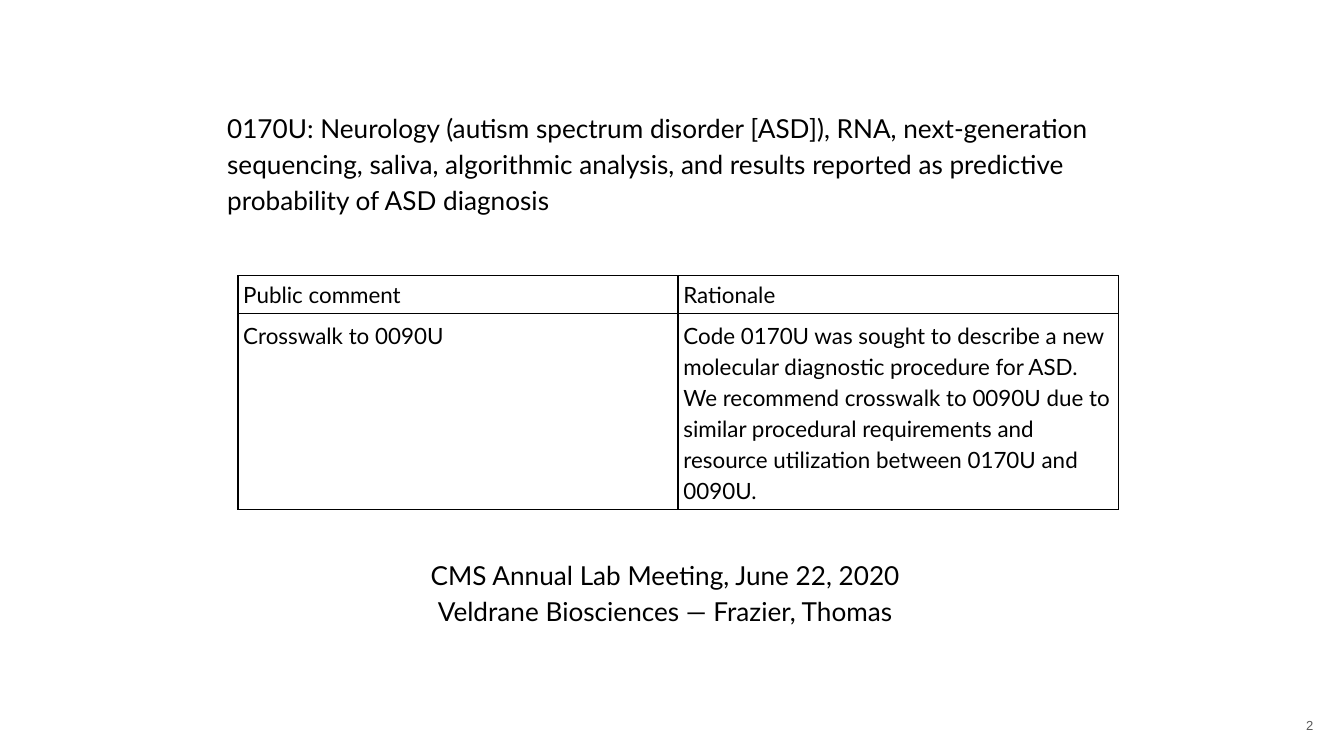
from lxml import etree
from pptx import Presentation
from pptx.dml.color import RGBColor
from pptx.enum.text import MSO_ANCHOR, MSO_AUTO_SIZE, PP_ALIGN
from pptx.oxml.ns import qn
from pptx.util import Inches, Pt

THEME = {
    "heading": {"name": "Lato", "size": Pt(14), "color": "000000"},
    "cell": {"name": "Lato", "size": Pt(12), "color": "000000"},
    "number": {"name": "Arial", "size": Pt(7), "color": "595959"},
    "border": {"width": Pt(0.75), "color": "000000"},
}


def write(tf, lines, style, inset, align=PP_ALIGN.LEFT, spacing=1.15):
    """Fill a text frame, one paragraph per line, in a theme style."""
    for i, line in enumerate(lines):
        p = tf.paragraphs[0] if i == 0 else tf.add_paragraph()
        p.alignment, p.line_spacing = align, spacing
        p.space_before = Pt(0)
        r = p.add_run()
        r.text = line
        r.font.name, r.font.size = THEME[style]["name"], THEME[style]["size"]
        r.font.color.rgb = RGBColor.from_string(THEME[style]["color"])
    frame = {"word_wrap": True, "margin_left": inset, "margin_right": inset,
             "margin_top": inset, "margin_bottom": inset}
    for name, value in frame.items():
        setattr(tf, name, value)


def add_borders(cell):
    tc_pr = cell._tc.get_or_add_tcPr()
    for i, side in enumerate(("lnL", "lnR", "lnT", "lnB")):
        ln = etree.Element(qn(f"a:{side}"), w=str(THEME["border"]["width"]))
        fill = etree.SubElement(ln, qn("a:solidFill"))
        etree.SubElement(fill, qn("a:srgbClr"), val=THEME["border"]["color"])
        tc_pr.insert(i, ln)


# A 16:9 slide, 10 inches wide
prs = Presentation()
prs.slide_width = Inches(10)
prs.slide_height = prs.slide_width * 9 // 16
s = prs.slides.add_slide(prs.slide_layouts[5])

# Heading, closing lines and slide number
texts = [
    (s.shapes.title, (1.59, 0.73, 6.72, 0.95), "heading", PP_ALIGN.LEFT, 1.15,
     ["0170U: Neurology (autism spectrum disorder [ASD]), RNA, next-generation "
      "sequencing, saliva, algorithmic analysis, and results reported as "
      "predictive probability of ASD diagnosis"]),
    (None, (1.59, 3.92, 6.72, 0.95), "heading", PP_ALIGN.CENTER, 1.15,
     ["CMS Annual Lab Meeting, June 22, 2020",
      "Veldrane Biosciences — Frazier, Thomas"]),
    (None, (9.27, 5.18, 0.6, 0.43), "number", PP_ALIGN.RIGHT, 1.0, ["2"]),
]
for sp, box, style, align, spacing, lines in texts:
    sp = sp or s.shapes.add_textbox(0, 0, 0, 0)
    sp.left, sp.top, sp.width, sp.height = map(Inches, box)
    tf = sp.text_frame
    tf.auto_size = MSO_AUTO_SIZE.NONE
    tf.vertical_anchor = MSO_ANCHOR.MIDDLE
    write(tf, lines, style, Inches(0.1), align, spacing)

# Public comment table
rows = [
    (0.27, 1.0, ["Public comment", "Rationale"]),
    (1.43, 1.15, [
        "Crosswalk to 0090U",
        "Code 0170U was sought to describe a new molecular diagnostic procedure "
        "for ASD. We recommend crosswalk to 0090U due to similar procedural "
        "requirements and resource utilization between 0170U and 0090U."]),
]
table = s.shapes.add_table(len(rows), 2, Inches(1.77), Inches(2.05),
                           Inches(6.55), Inches(1.72)).table
table.first_row = table.horz_banding = False
for i, (height, spacing, row) in enumerate(rows):
    table.rows[i].height = Inches(height)
    for j, text in enumerate(row):
        cell = table.cell(i, j)
        write(cell.text_frame, [text], "cell", Inches(0.04), spacing=spacing)
        cell.margin_left = cell.margin_right = Inches(0.04)
        cell.margin_top = cell.margin_bottom = Inches(0.04)
        cell.fill.background()
        add_borders(cell)

prs.save("out.pptx")
